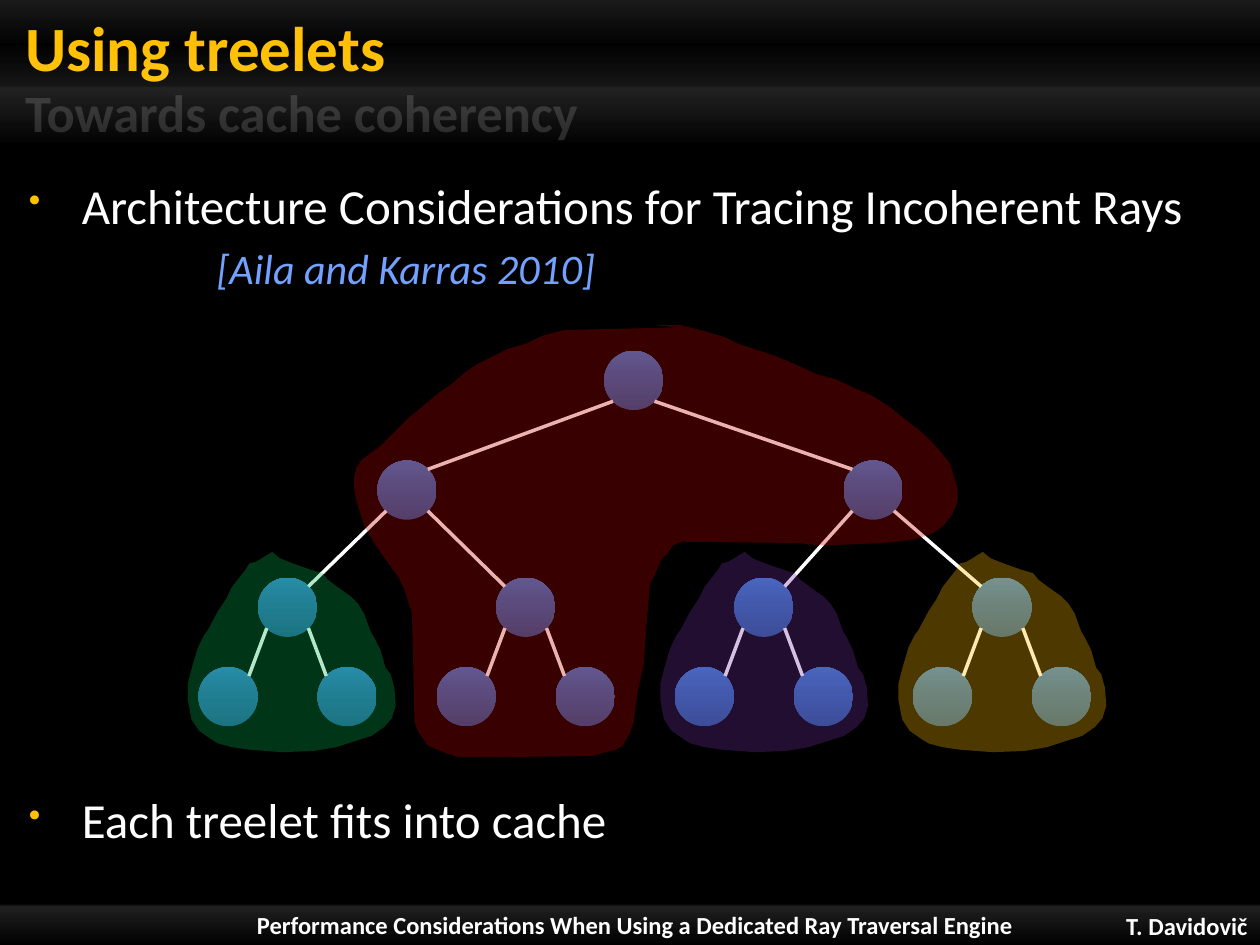
import pptx
import pptx.util
from lxml import etree
from pptx.dml.color import RGBColor
from pptx.enum.shapes import MSO_CONNECTOR, MSO_SHAPE
from pptx.enum.text import MSO_ANCHOR, MSO_AUTO_SIZE, PP_ALIGN
from pptx.oxml.ns import qn
from pptx.util import Inches

FONT = "Calibri"
BLACK = RGBColor(0x00, 0x00, 0x00)
WHITE = RGBColor(0xFF, 0xFF, 0xFF)
GOLD = RGBColor(0xFF, 0xC0, 0x00)
CITATION_BLUE = RGBColor(0x72, 0xA1, 0xFF)
NODE_DARK = RGBColor(0x27, 0x5A, 0x96)
NODE_MID = RGBColor(0x30, 0x6B, 0xB1)
NODE_LIGHT = RGBColor(0x3A, 0x7E, 0xCF)
GREEN = RGBColor(0x00, 0xB0, 0x50)
PURPLE = RGBColor(0x70, 0x30, 0xA0)
RED = RGBColor(0xC0, 0x00, 0x00)

# Content
TITLE = "Using treelets"
SUBTITLE = "Towards cache coherency"
TOPIC = "Architecture Considerations for Tracing Incoherent Rays"
CITATION = "[Aila and Karras 2010]"
CONCLUSION = "Each treelet fits into cache"
TALK = "Performance Considerations When Using a Dedicated Ray Traversal Engine"
AUTHOR = "T. Davidovič"

# Gradient stops: position %, colour, opacity %
BARS = [
    ((0, 7.16, 10, 0.34), [(5, WHITE, 0), (10, WHITE, 8), (11, WHITE, 13), (100, WHITE, 0)]),
    ((0, 0, 10, 1.14), [(0, WHITE, 10), (31, WHITE, 0), (60, WHITE, 8),
                        (61, WHITE, 13), (100, WHITE, 0)]),
]
NODE_STOPS = [(0, NODE_DARK, 100), (55, NODE_MID, 100), (100, NODE_LIGHT, 100)]
SUBTITLE_STOPS = [(0, WHITE, 15), (75, WHITE, 100)]

# Binary tree, level by level: the parent of node i is (i - 1) // 2
LEAF_X, LEAF_STEP = 1.81, 0.945
TREE = (
    [(5.03, 3.02), (3.23, 3.89), (6.93, 3.89)]
    + [(LEAF_X + LEAF_STEP * (2 * i + 0.5), 4.82) for i in range(4)]
    + [(LEAF_X + LEAF_STEP * i, 5.53) for i in range(8)]
)
NODE_SIZE = 0.47
CORNER = 0.165  # offset of a line end from a node centre, along each axis

# Treelet outlines, relative to their top left corner
SMALL_OUTLINE = [
    (0.67, 0), (0.54, 0.08), (0.49, 0.09), (0.46, 0.14), (0.35, 0.28), (0.3, 0.38),
    (0.24, 0.47), (0.16, 0.62), (0.13, 0.66), (0.08, 0.76), (0.03, 0.93), (0, 1.05),
    (0, 1.17), (0.02, 1.28), (0.03, 1.33), (0.09, 1.42), (0.19, 1.49), (0.24, 1.52),
    (0.35, 1.55), (0.49, 1.57), (0.75, 1.59), (1, 1.58), (1.18, 1.55), (1.27, 1.52),
    (1.46, 1.46), (1.56, 1.39), (1.62, 1.32), (1.65, 1.22), (1.64, 1.08), (1.61, 0.97),
    (1.57, 0.92), (1.53, 0.78), (1.48, 0.68), (1.45, 0.63), (1.4, 0.49), (1.35, 0.41),
    (1.29, 0.35), (1.19, 0.28), (1.11, 0.22), (1.07, 0.17), (0.97, 0.14), (0.83, 0.09),
    (0.73, 0.05),
]
ROOT_OUTLINE = [
    (2.54, 0.02), (1.67, 0.04), (1.51, 0.08), (1.36, 0.15), (1.22, 0.19), (1.08, 0.26),
    (0.98, 0.31), (0.89, 0.37), (0.76, 0.48), (0.67, 0.54), (0.54, 0.65), (0.44, 0.73),
    (0.36, 0.81), (0.29, 0.88), (0.21, 0.96), (0.06, 1.07), (0.02, 1.13), (0, 1.21),
    (0, 1.3), (0.02, 1.4), (0.08, 1.59), (0.16, 1.73), (0.25, 1.86), (0.35, 2),
    (0.4, 2.1), (0.46, 2.29), (0.47, 2.7), (0.48, 3.15), (0.51, 3.23), (0.59, 3.34),
    (0.73, 3.4), (0.83, 3.43), (1.13, 3.43), (1.89, 3.42), (2.08, 3.37), (2.13, 3.34),
    (2.19, 3.24), (2.22, 3.15), (2.25, 2.91), (2.3, 2.69), (2.32, 2.39), (2.35, 2.05),
    (2.38, 2), (2.44, 1.86), (2.49, 1.81), (2.53, 1.75), (2.6, 1.72), (3.51, 1.73),
    (3.7, 1.75), (4.21, 1.73), (4.46, 1.7), (4.6, 1.65), (4.68, 1.59), (4.75, 1.5),
    (4.79, 1.4), (4.79, 1.3), (4.73, 1.1), (4.65, 1), (4.57, 0.91), (4.48, 0.83),
    (4.4, 0.77), (4.25, 0.65), (4.11, 0.56), (3.97, 0.5), (3.82, 0.43), (3.67, 0.39),
    (3.52, 0.32), (3.33, 0.24), (3.05, 0.15), (2.95, 0.1), (2.75, 0.04), (2.59, 0),
    (2.41, 0),
]
TREELETS = [
    ((1.49, 4.38), SMALL_OUTLINE, GREEN),
    ((5.24, 4.38), SMALL_OUTLINE, PURPLE),
    ((7.13, 4.38), SMALL_OUTLINE, GOLD),
    ((2.81, 2.58), ROOT_OUTLINE, RED),
]


def set_opacity(color_element, percent):
    etree.SubElement(color_element, qn("a:alpha"), val=str(percent * 1000))


def set_gradient(fill, element, stops, angle):
    fill.gradient()
    gradient = element.find(".//" + qn("a:gradFill"))
    for child in list(gradient):
        gradient.remove(child)
    stop_list = etree.SubElement(gradient, qn("a:gsLst"))
    for position, color, opacity in stops:
        stop = etree.SubElement(stop_list, qn("a:gs"), pos=str(position * 1000))
        set_opacity(etree.SubElement(stop, qn("a:srgbClr"), val=str(color)), opacity)
    etree.SubElement(gradient, qn("a:lin"), ang=str(angle * 60000), scaled="0")


def add_gradient_shape(slide, preset, box, stops, angle):
    shape = slide.shapes.add_shape(preset, *map(Inches, box))
    shape.shadow.inherit = False
    shape.line.fill.background()
    set_gradient(shape.fill, shape._element.spPr, stops, angle)


def place_text(shape, box, anchor, insets):
    shape.left, shape.top, shape.width, shape.height = map(Inches, box)
    frame = shape.text_frame
    frame.word_wrap = True
    frame.auto_size = MSO_AUTO_SIZE.NONE
    frame.vertical_anchor = anchor
    (frame.margin_left, frame.margin_top,
     frame.margin_right, frame.margin_bottom) = map(Inches, insets)
    return frame


def add_text(slide, box, anchor=MSO_ANCHOR.MIDDLE, insets=(0.1, 0.05, 0.1, 0.05)):
    return place_text(slide.shapes.add_textbox(0, 0, 0, 0), box, anchor, insets)


def write(paragraph, text, size, color=None, bold=False, align=PP_ALIGN.LEFT):
    paragraph.text = text
    paragraph.alignment = align
    font = paragraph.font
    font.name, font.size, font.bold = FONT, pptx.util.Pt(size), bold
    if color is not None:
        font.color.rgb = color


def add_bullet(paragraph):
    properties = paragraph._p.get_or_add_pPr()
    properties.set("marL", str(Inches(0.49)))
    properties.set("indent", str(Inches(-0.42)))
    color = etree.SubElement(properties, qn("a:buClr"))
    etree.SubElement(color, qn("a:srgbClr"), val=str(GOLD))
    etree.SubElement(properties, qn("a:buSzPct"), val="70000")
    etree.SubElement(properties, qn("a:buChar"), char="•")


def add_body(slide, top, text):
    frame = add_text(slide, (0, top, 10, 1.34), MSO_ANCHOR.TOP, (0.16, 0.16, 0.1, 0.05))
    add_bullet(frame.paragraphs[0])
    write(frame.paragraphs[0], text, 28, WHITE)
    return frame


presentation = pptx.Presentation()
presentation.slide_width, presentation.slide_height = Inches(10), Inches(7.5)
slide = presentation.slides.add_slide(presentation.slide_layouts[5])
slide.background.fill.solid()
slide.background.fill.fore_color.rgb = BLACK

# Header and footer bars
for box, stops in BARS:
    add_gradient_shape(slide, MSO_SHAPE.RECTANGLE, box, stops, 90)
author = add_text(slide, (8.15, 7.19, 1.85, 0.31))
write(author.paragraphs[0], AUTHOR, 14, WHITE, True, PP_ALIGN.RIGHT)
talk = add_text(slide, (1.4, 7.17, 7.28, 0.34))
write(talk.paragraphs[0], TALK, 14, WHITE, True, PP_ALIGN.CENTER)

# Title and subtitle
title = place_text(slide.shapes.title, (0, 0, 8.23, 0.67), MSO_ANCHOR.BOTTOM, (0.2, 0, 0.1, 0))
write(title.paragraphs[0], TITLE, 36, GOLD, True)
subtitle = add_text(slide, (0, 0.65, 6.71, 0.47), insets=(0.2, 0, 0.1, 0))
write(subtitle.paragraphs[0], SUBTITLE, 30, bold=True)
subtitle_run = subtitle.paragraphs[0].runs[0]
set_gradient(subtitle_run.font.fill, subtitle_run._r, SUBTITLE_STOPS, 90)

# Tree nodes
for x, y in TREE:
    box = (x - NODE_SIZE / 2, y - NODE_SIZE / 2, NODE_SIZE, NODE_SIZE)
    add_gradient_shape(slide, MSO_SHAPE.OVAL, box, NODE_STOPS, 270)

# Tree edges, from each child up to its parent
for index, (x, y) in enumerate(TREE[1:], start=1):
    parent_x, parent_y = TREE[(index - 1) // 2]
    side = CORNER if x < parent_x else -CORNER
    ends = (x + side, y - CORNER, parent_x - side, parent_y + CORNER)
    edge = slide.shapes.add_connector(MSO_CONNECTOR.STRAIGHT, *map(Inches, ends))
    edge.line.color.rgb = WHITE
    edge.line.width = pptx.util.Pt(2)
    etree.SubElement(edge._element.spPr, qn("a:effectLst"))

# Body text
topic = add_body(slide, 1.23, TOPIC)
citation = topic.add_paragraph()
citation._p.get_or_add_pPr().set("marL", str(Inches(1.56)))
citation.space_before = pptx.util.Pt(5)
write(citation, CITATION, 24, CITATION_BLUE)
citation.font.italic = True
add_body(slide, 6.11, CONCLUSION)

# Treelet areas
for (left, top), outline, color in TREELETS:
    points = [(Inches(left + x), Inches(top + y)) for x, y in outline]
    builder = slide.shapes.build_freeform(*points[0])
    builder.add_line_segments(points[1:], close=True)
    treelet = builder.convert_to_shape()
    treelet.shadow.inherit = False
    treelet.line.fill.background()
    treelet.fill.solid()
    treelet.fill.fore_color.rgb = color
    set_opacity(treelet._element.spPr.find(".//" + qn("a:srgbClr")), 30)

presentation.save("out.pptx")
